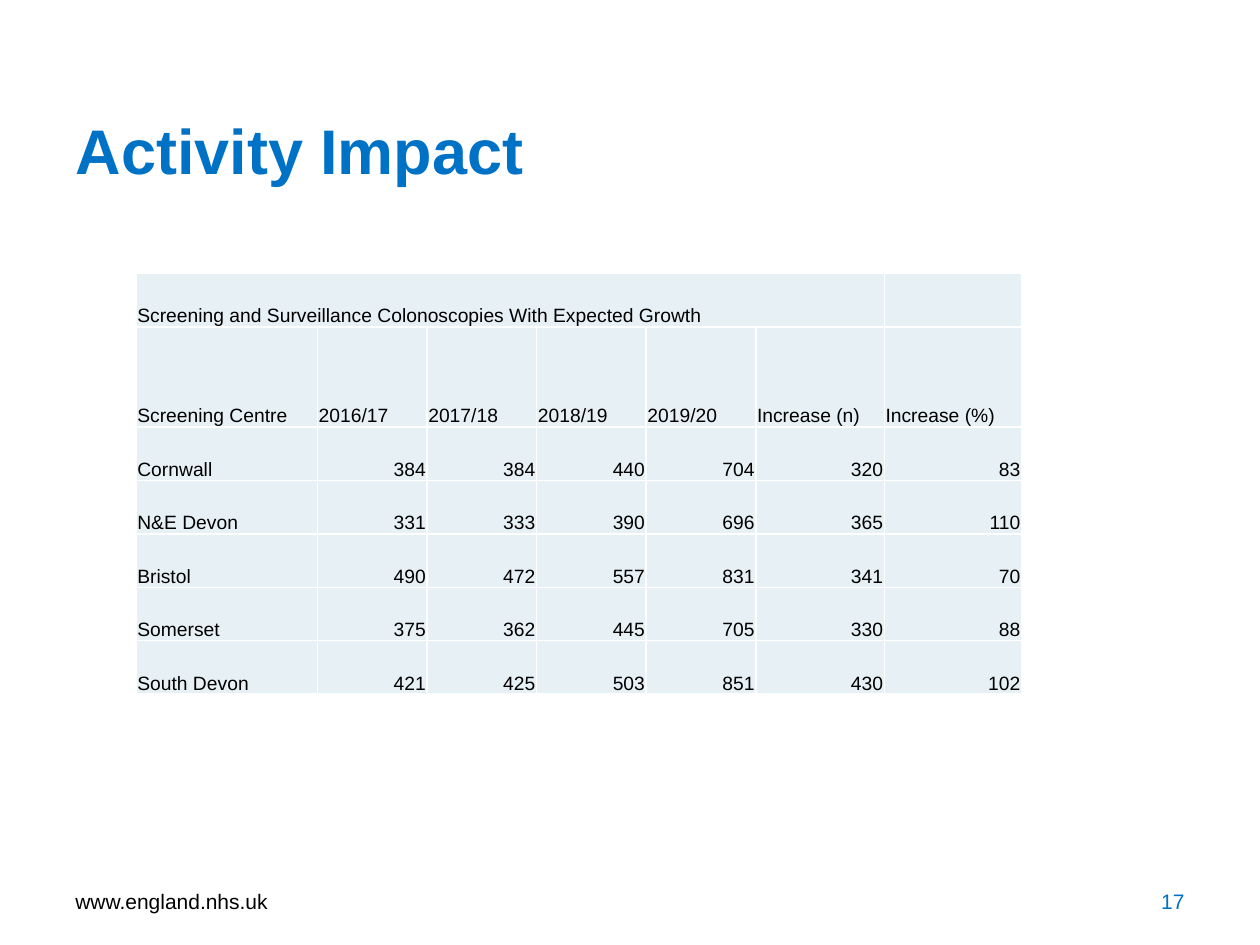
from dataclasses import dataclass

from lxml.etree import SubElement
from pptx import Presentation
from pptx.dml.color import RGBColor as Rgb
from pptx.enum.text import MSO_ANCHOR as Anchor, PP_ALIGN as Align
from pptx.oxml.ns import qn
from pptx.util import Inches, Pt


@dataclass(frozen=True)
class Theme:
    font: str = "Arial"
    ink: str = "000000"
    blue: str = "0072C6"
    pale: str = "E7F1F5"
    rule: str = "FFFFFF"
    title: int = 36
    foot: int = 12
    cell: int = 11


THEME = Theme()
HEADING = "Screening and Surveillance Colonoscopies With Expected Growth"
ROWS = [
    ("Screening Centre", "2016/17", "2017/18", "2018/19", "2019/20",
     "Increase (n)", "Increase (%)"),
    ("Cornwall", 384, 384, 440, 704, 320, 83),
    ("N&E Devon", 331, 333, 390, 696, 365, 110),
    ("Bristol", 490, 472, 557, 831, 341, 70),
    ("Somerset", 375, 362, 445, 705, 330, 88),
    ("South Devon", 421, 425, 503, 851, 430, 102),
]
COLS = [1.44] + [0.87] * 4 + [1.02, 1.09]
UNITS = [8, 15] + [8] * 5  # row heights, as parts of the table height


def write(frame, text, size=THEME.cell, color=THEME.ink, bold=False,
          align=Align.LEFT):
    para = frame.paragraphs[0]
    para.alignment = align
    run = para.add_run()
    run.text = text
    font = run.font
    font.name, font.size, font.bold = THEME.font, Pt(size), bold
    font.color.rgb = Rgb.from_string(color)


def place(shape, box):
    shape.left, shape.top, shape.width, shape.height = map(Inches, box)


def add_title(slide, box, text):
    title = slide.shapes.title
    place(title, box)
    title.text_frame.vertical_anchor = Anchor.MIDDLE
    write(title.text_frame, text, size=THEME.title, color=THEME.blue, bold=True)


def add_foot(slide, box, site, number):
    """Set the site at the left end and the page number at the right end."""
    left, top, width, height = box
    part = width * 0.26
    for x, text, color, align in (
            (left, site, THEME.ink, Align.LEFT),
            (left + width - part, number, THEME.blue, Align.RIGHT)):
        note = slide.shapes.add_textbox(*map(Inches, (x, top, part, height)))
        frame = note.text_frame
        frame.word_wrap = True
        frame.vertical_anchor = Anchor.MIDDLE
        write(frame, text, size=THEME.foot, color=color, align=align)


def style(cell):
    cell.margin_left = cell.margin_right = cell.margin_top = Inches(0.01)
    cell.margin_bottom = 0
    cell.vertical_anchor = Anchor.BOTTOM
    props = cell._tc.get_or_add_tcPr()
    for side in ("lnL", "lnR", "lnT", "lnB"):
        line = SubElement(props, qn(f"a:{side}"), w=str(Pt(1)))
        paint = SubElement(line, qn("a:solidFill"))
        SubElement(paint, qn("a:srgbClr"), val=THEME.rule)
    cell.fill.solid()
    cell.fill.fore_color.rgb = Rgb.from_string(THEME.pale)


def add_grid(slide, box):
    table = slide.shapes.add_table(
        len(UNITS), len(COLS), *map(Inches, box)).table
    table.first_row = table.horz_banding = False
    for col, share in zip(table.columns, COLS):
        col.width = Inches(box[2] * share / sum(COLS))
    for row, share in zip(table.rows, UNITS):
        row.height = Inches(box[3] * share / sum(UNITS))
    for cell in table.iter_cells():
        style(cell)
    table.cell(0, 0).merge(table.cell(0, len(COLS) - 2))
    write(table.cell(0, 0).text_frame, HEADING)
    for r, row in enumerate(ROWS, 1):
        for c, value in enumerate(row):
            align = Align.RIGHT if isinstance(value, int) else Align.LEFT
            write(table.cell(r, c).text_frame, str(value), align=align)


def main():
    deck = Presentation()
    deck.slide_width, deck.slide_height = Inches(10), Inches(7.5)
    slide = deck.slides.add_slide(deck.slide_layouts[5])
    add_foot(slide, (0.5, 6.95, 9, 0.4), "www.england.nhs.uk", "17")
    add_title(slide, (0.5, 0.82, 8.05, 0.73), "Activity Impact")
    add_grid(slide, (1.08, 2.17, 7.03, 3.34))
    deck.save("out.pptx")


if __name__ == "__main__":
    main()
